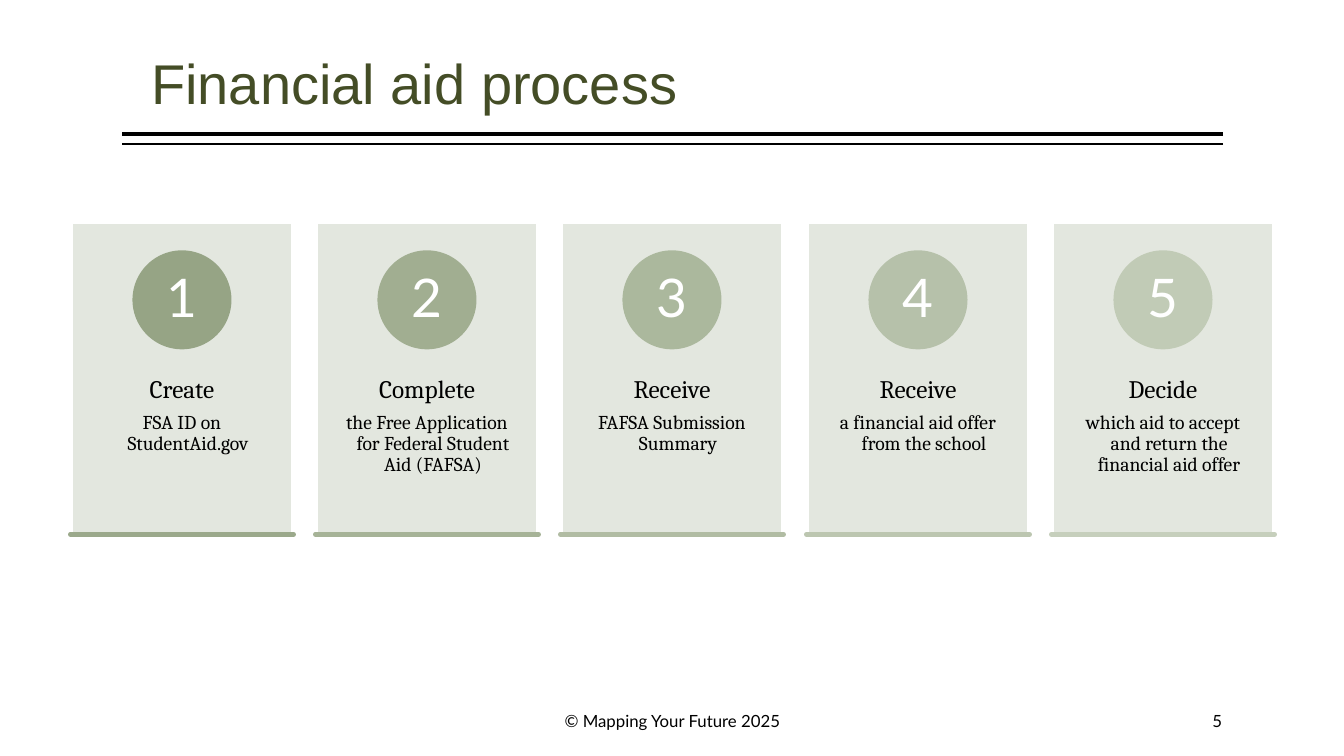
from lxml import etree
from pptx import Presentation
from pptx import util as u
from pptx.dml.color import RGBColor
from pptx.enum import shapes, text
from pptx.oxml.ns import qn

PX = 9144  # 100 px to the inch
HUES = {"ink": "000000", "title": "444D26", "card": "E1E5DC", "white": "FFFFFF"}
STEPS = [  # heading, detail, circle, bar
    ("Create", "FSA ID on StudentAid.gov", "96A485", "9BA98B"),
    ("Complete", "the Free Application for Federal Student Aid (FAFSA)", "A1AE91", "A6B397"),
    ("Receive", "FAFSA Submission Summary", "ABB89D", "B1BCA3"),
    ("Receive", "a financial aid offer from the school", "B6C1AA", "BCC6B0"),
    ("Decide", "which aid to accept and return the financial aid offer", "C1CBB6", "C6CFBC"),
]
LEFT, MID, RIGHT = text.PP_ALIGN.LEFT, text.PP_ALIGN.CENTER, text.PP_ALIGN.RIGHT
TOP, CENTRE = text.MSO_ANCHOR.TOP, text.MSO_ANCHOR.MIDDLE
RECT, OVAL = shapes.MSO_SHAPE.RECTANGLE, shapes.MSO_SHAPE.OVAL


def px(*nums):
    return [u.Emu(n * PX) for n in nums]


def hue(code):
    return RGBColor.from_string(HUES.get(code, code))


def label(slide, box, paras, anchor=CENTRE, inset=(0, 5)):
    """Text box; each para is (words, font, points, colour, paragraph format)."""
    frame = slide.shapes.add_textbox(*px(*box)).text_frame
    side, edge = px(*inset)
    form = {"word_wrap": True, "vertical_anchor": anchor, "margin_left": side,
            "margin_right": side, "margin_top": edge, "margin_bottom": edge}
    for key, val in form.items():
        setattr(frame, key, val)
    for i, (words, face, size, ink, style) in enumerate(paras):
        para = frame.add_paragraph() if i else frame.paragraphs[0]
        for key, val in style.items():
            setattr(para, key, val)
        run = para.add_run()
        run.text = words
        run.font.name, run.font.size = face, u.Pt(size)
        run.font.color.rgb = hue(ink)
    return frame


def block(slide, kind, box, fill, line):
    part = slide.shapes.add_shape(kind, *px(*box))
    part.shadow.inherit = False
    part.fill.solid()
    part.fill.fore_color.rgb = hue(fill)
    part.line.color.rgb = hue(line)
    part.line.width = u.Pt(3.78)
    return part


def rule(slide, x, y, wide, weight):
    line = slide.shapes.add_connector(
        shapes.MSO_CONNECTOR.STRAIGHT, *px(x + wide, y, x, y))
    line.line.color.rgb = hue("ink")
    line.line.width = u.Pt(weight)
    etree.SubElement(line._element.spPr, qn("a:effectLst"))


def header(slide, x, y, wide, high):
    label(slide, (x + 29, y, wide + 6, high),
          [("Financial aid process", "Arial", 40, "title",
            {"alignment": LEFT, "line_spacing": 0.9})])
    for drop, weight in ((95, 3), (105, 1)):
        rule(slide, x, y + drop, wide, weight)


def card(slide, x, y, wide, high, num, step):
    head, note, disc, bar = step
    # Panel, slightly see-through
    panel = block(slide, RECT, (x, y, wide, high), "card", "white")
    tint = panel.fill._xPr.find(qn("a:solidFill"))[0]
    etree.SubElement(tint, qn("a:alpha"), val="90000")

    # Heading and detail
    style = {"alignment": MID, "line_spacing": 0.9}
    frame = label(slide, (x, y + 118, wide, 186),
                  [(head, "Cambria", 18, "ink", {**style, "space_after": u.Pt(6)}),
                   (note, "Cambria", 14, "ink", {**style, "level": 1})],
                  TOP, (17, 36))
    props = frame.paragraphs[1]._p.get_or_add_pPr()
    hang = 12 * PX
    props.set("marL", str(hang))
    props.set("indent", str(-hang))

    # Numbered circle
    size, cell = 93, 66
    block(slide, OVAL, (x + (wide - size) // 2, y + 31, size, size), disc, disc)
    label(slide, (x + (wide - cell) // 2, y + 45, cell, cell),
          [(str(num), "Lato", 38, "white", style)], CENTRE, (7, 1))

    # Base bar
    block(slide, RECT, (x, y + high, wide, 0), bar, bar)


def cards(slide, x, y, wide, high):
    size = 221
    pitch = (wide - size) / (len(STEPS) - 1)
    for i, step in enumerate(STEPS):
        card(slide, x + round(i * pitch), y, size, high, i + 1, step)


def footer(slide, x, y, wide, high):
    label(slide, (x, y, 450, high),
          [("© Mapping Your Future 2025", "Lato", 12, "ink", {"alignment": MID})])
    label(slide, (x + wide - 200, y, 200, high),
          [("5", "Lato", 12, "ink", {"alignment": RIGHT})])


def main():
    deck = Presentation()
    deck.slide_width, deck.slide_height = px(1333, 750)
    slide = deck.slides.add_slide(deck.slide_layouts[6])
    header(slide, 121, 38, 1092, 96)
    cards(slide, 70, 220, 1194, 310)
    footer(slide, 442, 695, 770, 40)
    deck.save("out.pptx")


if __name__ == "__main__":
    main()
